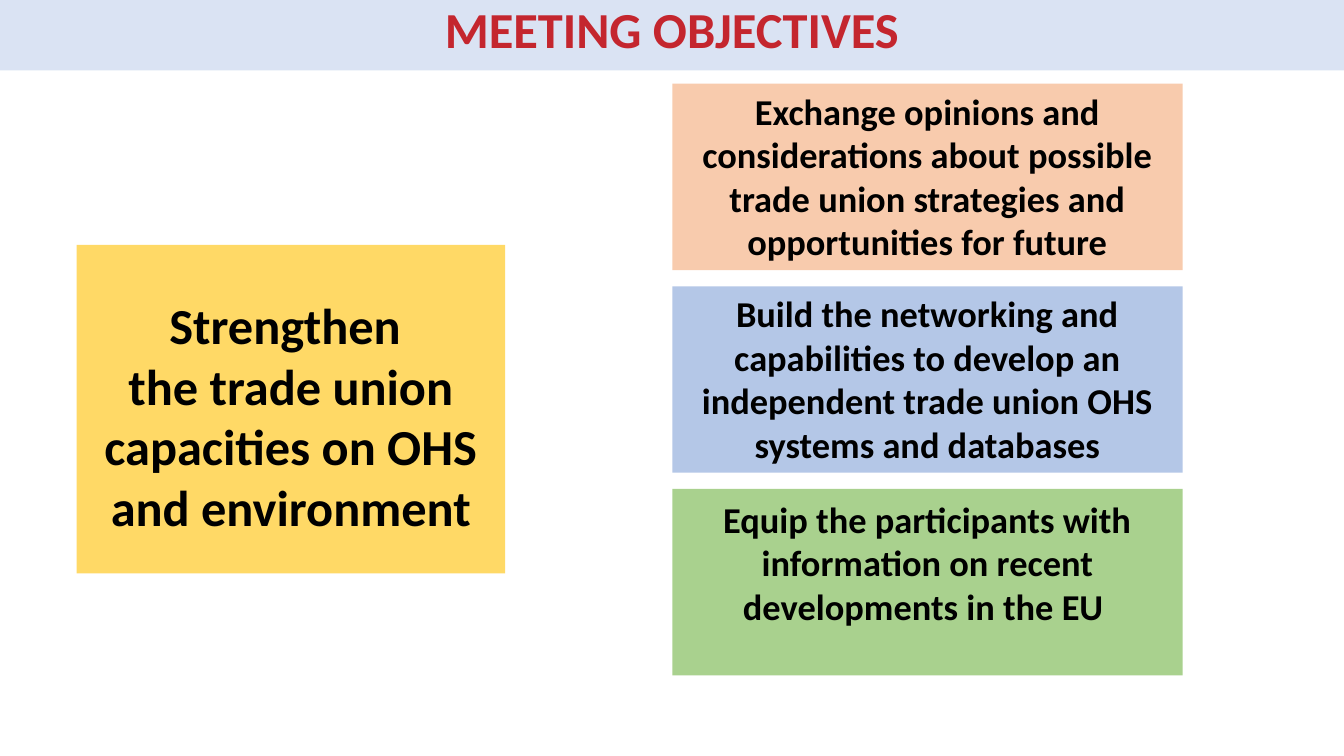
from pptx import Presentation
from pptx.dml.color import RGBColor
from pptx.enum.shapes import MSO_SHAPE
from pptx.enum.text import MSO_ANCHOR, PP_ALIGN
from pptx.util import Inches, Pt


def color(code):
    return RGBColor.from_string(code)


def add_box(text, left, top, width, height, fill, size=26, ink="000000", inset=0.05, spacing=None):
    box = slide.shapes.add_shape(
        MSO_SHAPE.RECTANGLE, Inches(left), Inches(top), Inches(width), Inches(height))
    box.shadow.inherit = False
    box.fill.solid()
    box.fill.fore_color.rgb = color(fill)
    box.line.fill.background()
    frame = box.text_frame
    frame.word_wrap = True
    frame.vertical_anchor = MSO_ANCHOR.TOP
    frame.margin_top = Inches(inset)
    frame.text = text
    for para in frame.paragraphs:
        para.alignment = PP_ALIGN.CENTER
        para.line_spacing = spacing
        for run in para.runs:
            run.font.name = "Calibri"
            run.font.size = Pt(size)
            run.font.bold = True
            run.font.color.rgb = color(ink)


deck = Presentation()
deck.slide_width = Inches(13.33)
deck.slide_height = Inches(7.5)
slide = deck.slides.add_slide(deck.slide_layouts[6])

add_box("MEETING OBJECTIVES", 0, 0, 13.33, 0.7, "DAE3F3", size=36, ink="C4262E", spacing=0.9)
add_box("Strengthen \nthe trade union capacities on OHS and environment",
        0.76, 2.43, 4.25, 3.26, "FFD966", size=36, inset=0.49)

goals = [
    ("Exchange opinions and considerations about possible trade union strategies "
     "and opportunities for future", "F8CBAD", 0.05),
    ("Build the networking and capabilities to develop an independent trade union "
     "OHS systems and databases", "B4C7E7", 0.05),
    ("Equip the participants with information on recent developments in the EU ",
     "A9D18E", 0.08),
]
for row, (text, fill, inset) in enumerate(goals):
    add_box(text, 6.67, 0.83 + row * 2.01, 5.06, 1.85, fill, inset=inset)

deck.save("out.pptx")
